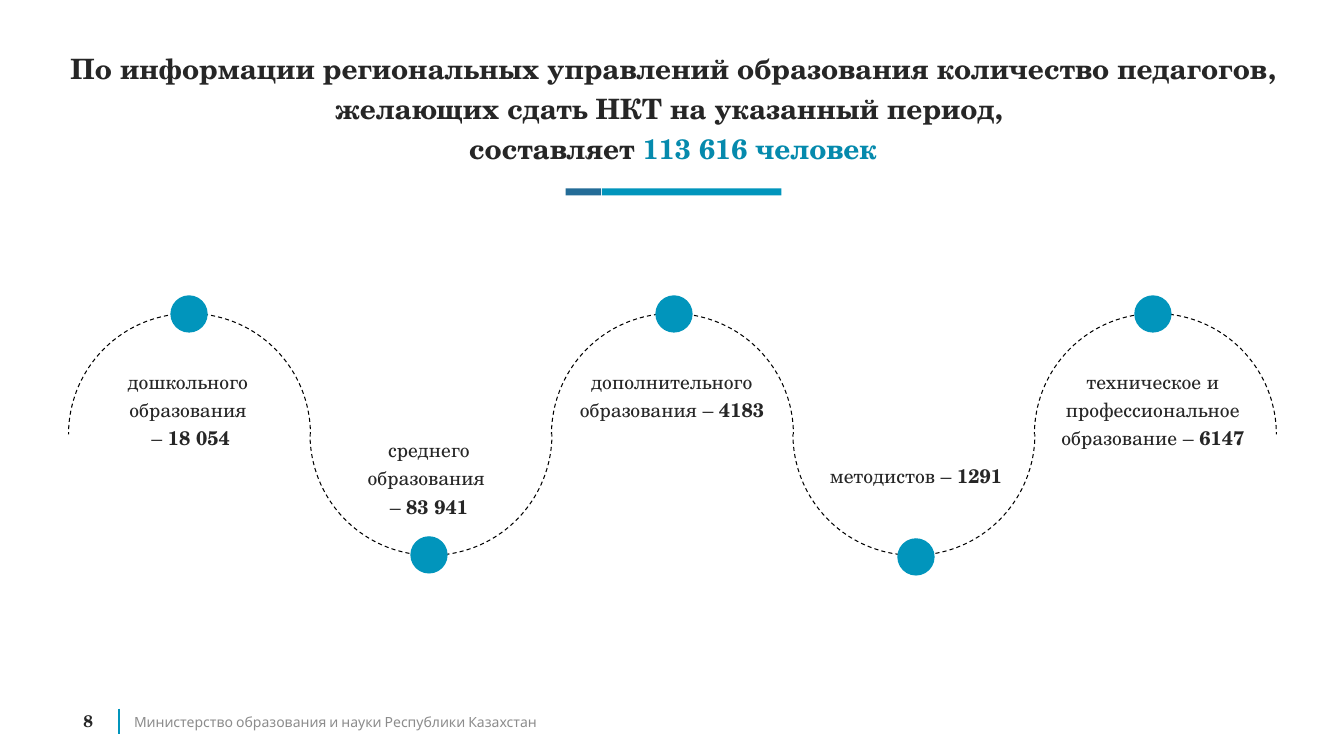
from pptx import Presentation
from pptx.dml.color import RGBColor
from pptx.enum.dml import MSO_LINE
from pptx.enum.shapes import MSO_CONNECTOR, MSO_SHAPE
from pptx.enum.text import MSO_ANCHOR, PP_ALIGN
from pptx.oxml import parse_xml
from pptx.util import Inches, Pt

THEME = {
    "teal": RGBColor.from_string("0195BC"),
    "navy": RGBColor.from_string("246C97"),
    "accent": RGBColor.from_string("058AAD"),
    "ink": RGBColor.from_string("262626"),
    "grey": RGBColor.from_string("8C8C8C"),
    "black": RGBColor.from_string("000000"),
    "serif": "TeX Gyre Schola",
    "sans": "Cabin",
    "title": Pt(20),
    "label": Pt(14),
    "number": Pt(12),
    "footer": Pt(10),
}

deck = Presentation()
deck.slide_width, deck.slide_height = Inches(13.33), Inches(7.5)
page = deck.slides.add_slide(deck.slide_layouts[6])


def add_shape(kind, area, fill=None):
    shape = page.shapes.add_shape(kind, *map(Inches, area))
    shape.shadow.inherit = False
    if fill is None:
        shape.fill.background()
    else:
        shape.fill.solid()
        shape.fill.fore_color.rgb = fill
        shape.line.fill.background()
    return shape


def add_text(area, paragraphs, size, font="serif", color="ink",
             align=PP_ALIGN.CENTER, anchor=MSO_ANCHOR.TOP, spacing=1.2):
    box = page.shapes.add_textbox(*map(Inches, area))
    frame_format = {"word_wrap": True, "vertical_anchor": anchor, "margin_left": 0,
                    "margin_right": 0, "margin_top": 0, "margin_bottom": 0}
    for name, value in frame_format.items():
        setattr(box.text_frame, name, value)
    for index, spans in enumerate(paragraphs):
        para = box.text_frame.add_paragraph() if index else box.text_frame.paragraphs[0]
        para.alignment, para.line_spacing = align, spacing
        for text, bold, *tint in spans:
            span = para.add_run()
            span.text = text
            font_format = {"name": THEME[font], "size": THEME[size], "bold": bold}
            for name, value in font_format.items():
                setattr(span.font, name, value)
            span.font.color.rgb = THEME[tint[0] if tint else color]


divider = page.shapes.add_connector(
    MSO_CONNECTOR.STRAIGHT, Inches(1.18), Inches(7.03), Inches(1.18), Inches(7.28))
divider.line.color.rgb, divider.line.width = THEME["teal"], Pt(1)
divider._element.spPr.append(parse_xml(
    '<a:effectLst xmlns:a="http://schemas.openxmlformats.org/drawingml/2006/main"/>'))

add_text((0.68, 7.04, 0.39, 0.22), [[("8", True)]], "number",
         anchor=MSO_ANCHOR.MIDDLE, spacing=1)
add_text((1.33, 7.06, 4.15, 0.2),
         [[("Министерство образования и науки Республики Казахстан", False)]],
         "footer", font="sans", color="grey", align=PP_ALIGN.LEFT,
         anchor=MSO_ANCHOR.MIDDLE, spacing=1)

add_text((0.67, 0.44, 12.01, 1.21), [
    [("По информации региональных управлений образования количество педагогов, "
      "желающих сдать НКТ на указанный период, ", True)],
    [("составляет ", True), ("113 616 человек", True, "accent")],
], "title")
add_shape(MSO_SHAPE.RECTANGLE, (5.97, 1.87, 1.78, 0.07), THEME["teal"])
add_shape(MSO_SHAPE.RECTANGLE, (5.61, 1.87, 0.35, 0.07), THEME["navy"])

WAVE_LEFT, WAVE_TOP, ARC_SIZE, ARC_STEP = 0.68, 3.11, 2.4, 2.395
for index in range(5):
    for mirrored in (False, True):
        arc = add_shape(MSO_SHAPE.ARC, (WAVE_LEFT + index * ARC_STEP, WAVE_TOP, ARC_SIZE, ARC_SIZE))
        line_format = {"width": Pt(0.75), "dash_style": MSO_LINE.DASH}
        for name, value in line_format.items():
            setattr(arc.line, name, value)
        arc.line.color.rgb = THEME["black"]
        for name, flipped in (("flipH", mirrored), ("flipV", index % 2 == 1)):
            if flipped:
                arc._element.spPr.xfrm.set(name, "1")

DOT_SIZE, LABEL_WIDTH = 0.37, 1.91
stages = [
    (1.69, 2.93, 0.91, 3.62, 0.82,
     [[("дошкольного образования", False)], [(" – ", False), ("18 054", True)]]),
    (4.07, 5.32, 3.3, 4.3, 0.82,
     [[("среднего образования ", False)], [("– ", False), ("83 941", True)]]),
    (6.5, 2.93, 5.71, 3.62, 0.54,
     [[("дополнительного образования – ", False), ("4183", True)]]),
    (8.9, 5.34, 8.13, 4.56, 0.26,
     [[("методистов – ", False), ("1291", True)]]),
    (11.25, 2.93, 10.48, 3.62, 0.82,
     [[("техническое и профессиональное образование – ", False), ("6147", True)]]),
]
for dot_left, dot_top, label_left, label_top, label_height, paragraphs in stages:
    add_shape(MSO_SHAPE.OVAL, (dot_left, dot_top, DOT_SIZE, DOT_SIZE), THEME["teal"])
    add_text((label_left, label_top, LABEL_WIDTH, label_height), paragraphs, "label")

deck.save("out.pptx")
